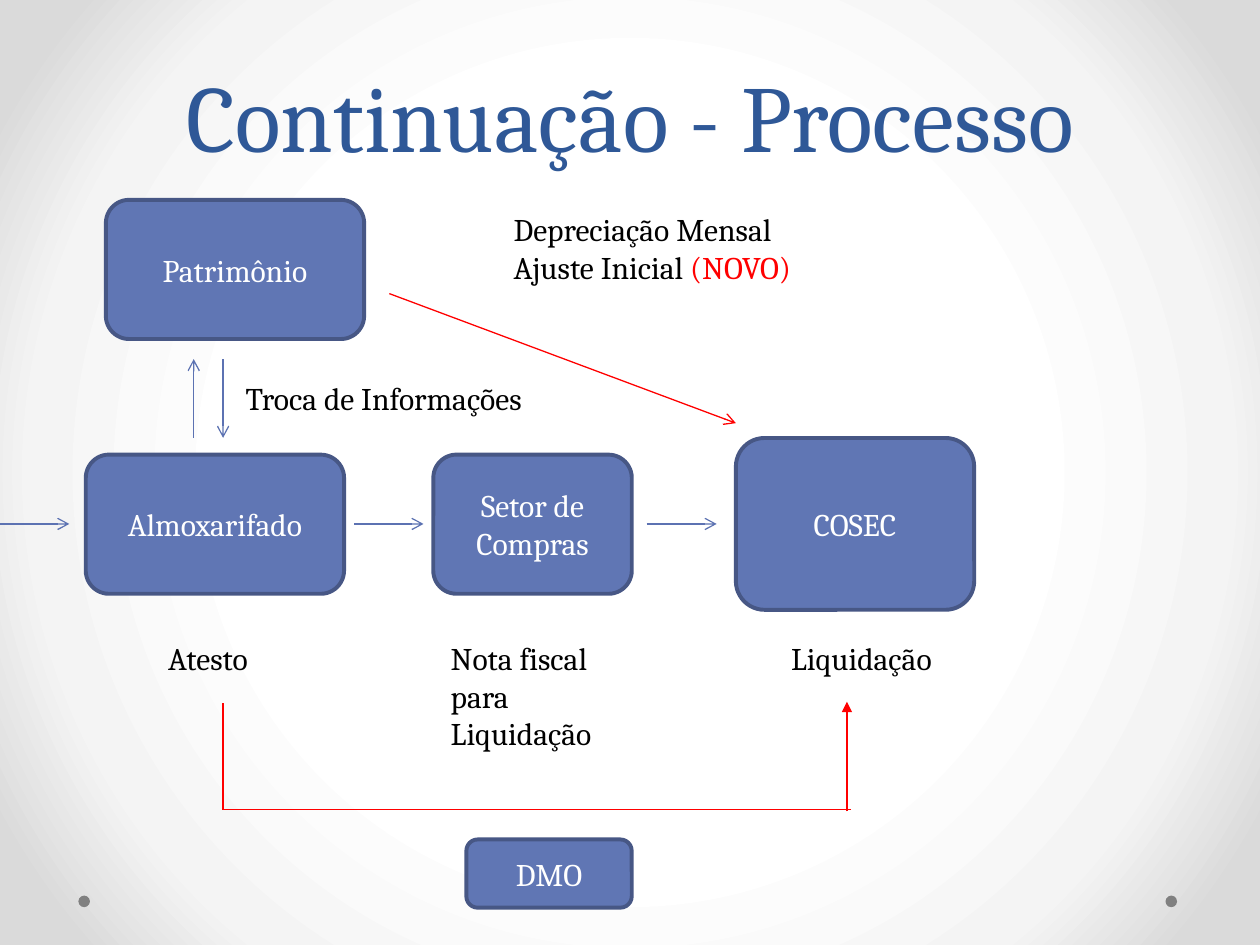
from lxml.etree import SubElement
from pptx import Presentation
from pptx.dml.color import RGBColor
from pptx.enum.shapes import MSO_CONNECTOR, MSO_SHAPE
from pptx.enum.text import MSO_ANCHOR, MSO_AUTO_SIZE, PP_ALIGN
from pptx.oxml import parse_xml
from pptx.oxml.ns import nsdecls, qn
from pptx.util import Pt

BLUE = RGBColor(0x60, 0x76, 0xB4)
BORDER = RGBColor(0x47, 0x57, 0x85)
ARROW = RGBColor(0x5C, 0x72, 0xB2)
TITLE = RGBColor(0x2F, 0x58, 0x97)
RED = RGBColor(0xFF, 0x00, 0x00)
BLACK = RGBColor(0x00, 0x00, 0x00)
WHITE = RGBColor(0xFF, 0xFF, 0xFF)
GRAY = RGBColor(0x80, 0x80, 0x80)
BACKGROUND = [(50, "FFFFFF"), (76, "F4F4F4"), (92, "DADADA")]


class ProcessPage:
    font = "Cambria"
    size = 18

    def __init__(self, page):
        self.page = page

    def background(self, stops):
        """Radial gradient, running outward from the centre."""
        self.page.background.fill.gradient()
        linear = self.page.element.find(".//" + qn("a:gradFill"))
        marks = "".join(
            f'<a:gs pos="{place * 1000}"><a:srgbClr val="{color}"/></a:gs>'
            for place, color in stops
        )
        radial = parse_xml(
            f'<a:gradFill {nsdecls("a")} rotWithShape="1"><a:gsLst>{marks}</a:gsLst>'
            '<a:path path="circle"><a:fillToRect l="50000" t="50000" r="50000" b="50000"/>'
            "</a:path></a:gradFill>"
        )
        linear.getparent().replace(linear, radial)

    def add_span(self, para, text, color, size=None):
        span = para.add_run()
        span.text = text
        span.font.name = self.font
        span.font.size = Pt(size or self.size)
        span.font.color.rgb = color

    def title(self, text, left, top, width, height):
        box = self.page.shapes.title
        box.left, box.top, box.width, box.height = map(Pt, (left, top, width, height))
        frame = box.text_frame
        frame.auto_size = MSO_AUTO_SIZE.NONE
        frame.vertical_anchor = MSO_ANCHOR.BOTTOM
        para = frame.paragraphs[0]
        para.alignment = PP_ALIGN.CENTER
        para.line_spacing = Pt(58)
        self.add_span(para, text, TITLE, 54)

    def shape(self, kind, fill, left, top, width, height):
        box = self.page.shapes.add_shape(kind, *map(Pt, (left, top, width, height)))
        box.shadow.inherit = False
        box.fill.solid()
        box.fill.fore_color.rgb = fill
        return box

    def dot(self, left, top, size):
        self.shape(MSO_SHAPE.OVAL, GRAY, left, top, size, size).line.fill.background()

    def step(self, text, left, top, width, height):
        box = self.shape(MSO_SHAPE.ROUNDED_RECTANGLE, BLUE, left, top, width, height)
        box.line.color.rgb = BORDER
        box.line.width = Pt(2.25)
        frame = box.text_frame
        frame.word_wrap = True
        frame.vertical_anchor = MSO_ANCHOR.MIDDLE
        para = frame.paragraphs[0]
        para.alignment = PP_ALIGN.CENTER
        self.add_span(para, text, WHITE)

    def label(self, lines, left, top, width, height):
        """Each line is a list of (text, color) spans."""
        box = self.page.shapes.add_textbox(*map(Pt, (left, top, width, height)))
        frame = box.text_frame
        frame.word_wrap = True
        frame.auto_size = MSO_AUTO_SIZE.SHAPE_TO_FIT_TEXT
        for index, spans in enumerate(lines):
            para = frame.add_paragraph() if index else frame.paragraphs[0]
            for text, color in spans:
                self.add_span(para, text, color)

    def line(self, start, end, color=ARROW, head="arrow"):
        link = self.page.shapes.add_connector(
            MSO_CONNECTOR.STRAIGHT, *map(Pt, (*start, *end))
        )
        link.line.color.rgb = color
        link.line.width = Pt(0.75)
        if head:
            SubElement(link.line._get_or_add_ln(), qn("a:tailEnd"), type=head)
        SubElement(link._element.spPr, qn("a:effectLst"))


def main():
    deck = Presentation()
    deck.slide_width, deck.slide_height = Pt(720), Pt(540)
    process = ProcessPage(deck.slides.add_slide(deck.slide_layouts[5]))

    # Background, corner dots and title
    process.background(BACKGROUND)
    for left in (666, 44.8):
        process.dot(left, 511.8, 6.6)
    process.title("Continuação - Processo", 36, -24.5, 648, 126)

    # Process steps
    for step in (
        ("Patrimônio", 60.5, 114.2, 147.6, 79.5),
        ("Almoxarifado", 49, 259.8, 147.6, 79.5),
        ("Setor de Compras", 247.6, 259.8, 113.4, 79.5),
        ("COSEC", 420.5, 250.3, 136.2, 98.2),
        ("DMO", 266.5, 479.7, 94.5, 39),
    ):
        process.step(*step)

    # Arrows along the main flow
    for start, end in ((0, 39.6), (202.5, 242), (369.5, 409.5)):
        process.line((start, 299.4), (end, 299.4))

    # Exchange between the stores and the assets office
    top, bottom = 205.2, 250.2
    process.line((110.7, bottom), (110.7, top))
    process.line((127.5, top), (127.5, bottom))

    # From assets to settlement
    process.line((222.5, 167.8), (420.5, 241.8), RED)

    # Return path under the flow
    process.line((127.5, 462.7), (486.5, 462.7), RED, None)
    process.line((127.5, 401.8), (127.5, 462.7), RED, None)
    process.line((484, 463.7), (484, 401), RED, "triangle")

    # Labels under the steps
    for text, left, width, height in (
        ("Atesto", 89, 119, 29),
        ("Nota fiscal para Liquidação", 250.5, 119, 72.7),
        ("Liquidação", 445, 124.5, 29),
    ):
        process.label([[(text, BLACK)]], left, 361.5, width, height)

    # Notes beside the arrows
    process.label([[("Troca de Informações", BLACK)]], 133.2, 213, 201, 29)
    process.label(
        [
            [("Depreciação Mensal", BLACK)],
            [("Ajuste Inicial ", BLACK), ("(NOVO)", RED)],
        ],
        286.4, 116.7, 193, 51,
    )

    deck.save("out.pptx")


if __name__ == "__main__":
    main()
